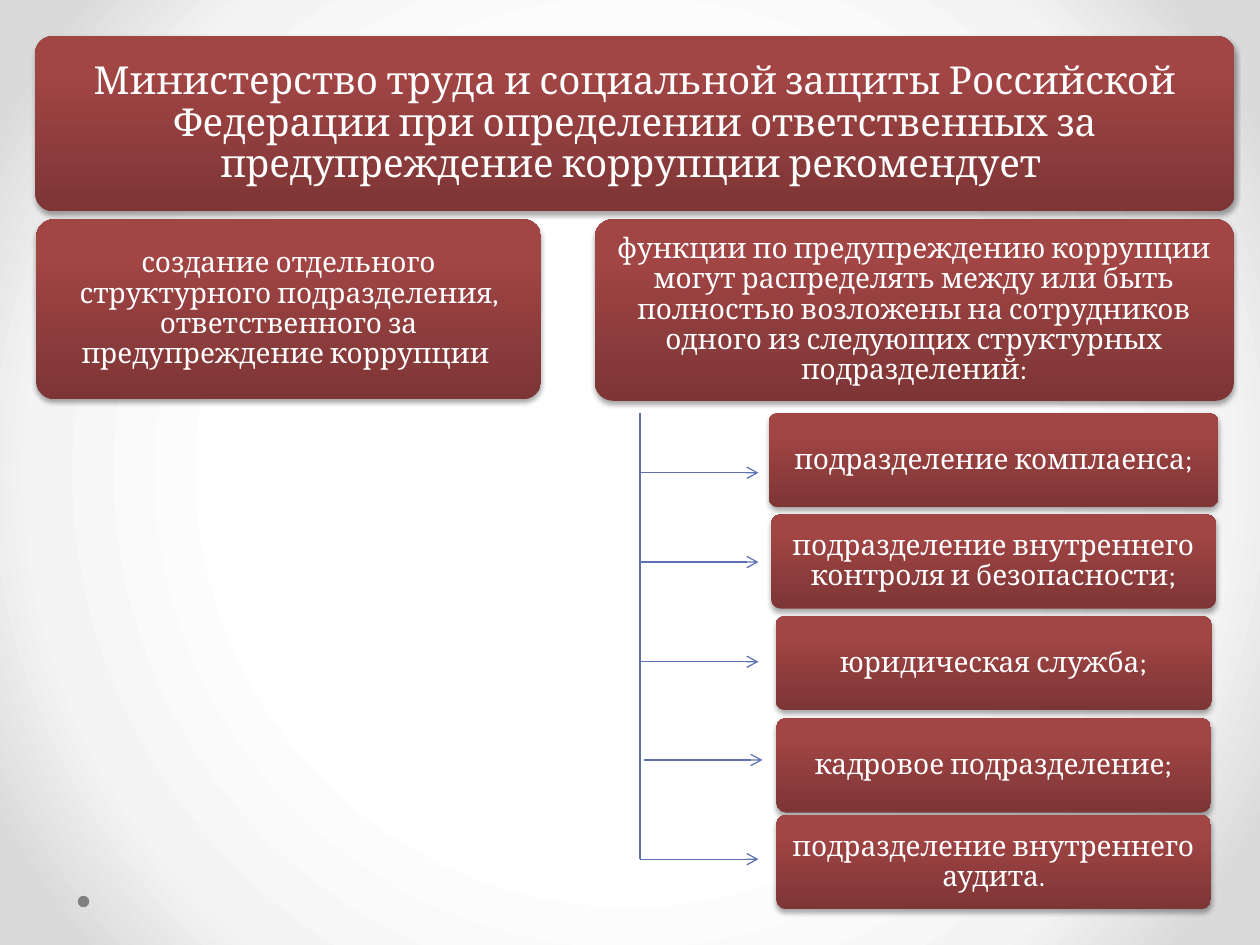
from lxml import etree
from pptx import Presentation
from pptx.dml.color import RGBColor
from pptx.enum.shapes import MSO_CONNECTOR, MSO_SHAPE
from pptx.enum.text import MSO_ANCHOR, PP_ALIGN
from pptx.oxml.ns import qn
from pptx.util import Cm, Pt

ROUNDED, OVAL = MSO_SHAPE.ROUNDED_RECTANGLE, MSO_SHAPE.OVAL
STRAIGHT = MSO_CONNECTOR.STRAIGHT
MIDDLE, CENTER = MSO_ANCHOR.MIDDLE, PP_ALIGN.CENTER

FONT = "Cambria"
WHITE = RGBColor(0xFF, 0xFF, 0xFF)
GREY = RGBColor(0x80, 0x80, 0x80)
BLUE = RGBColor(0x5C, 0x72, 0xB2)
BLACK = RGBColor(0x00, 0x00, 0x00)
# Gradient stops: percent, colour
CARD_STOPS = [(0, RGBColor(0x7D, 0x35, 0x35)), (80, RGBColor(0xA2, 0x45, 0x45)),
              (100, RGBColor(0xA4, 0x43, 0x43))]
PAGE_STOPS = [(50, WHITE), (76, RGBColor(0xF4, 0xF4, 0xF4)),
              (92, RGBColor(0xDA, 0xDA, 0xDA))]

TITLE = ("Министерство труда и социальной защиты Российской Федерации "
         "при определении ответственных за предупреждение коррупции рекомендует ")
SEPARATE_UNIT = ("создание отдельного структурного подразделения, "
                 "ответственного за предупреждение коррупции ")
SHARED_DUTIES = ("функции по предупреждению коррупции могут распределять между "
                 "или быть полностью возложены на сотрудников одного из следующих "
                 "структурных подразделений:")

# Departments: text, top and width in cm
DEPARTMENTS = [
    ("подразделение комплаенса;", 8.33, 9.07),
    ("подразделение внутреннего контроля и безопасности;", 10.37, 8.97),
    ("юридическая служба;", 12.42, 8.79),
    ("кадровое подразделение;", 14.48, 8.76),
    ("подразделение внутреннего аудита.", 16.43, 8.76),
]
DEPARTMENT_CENTER, DEPARTMENT_HEIGHT = 20.03, 1.9

# Arrows: left and height on the page in cm
TRUNK_X, TRUNK_TOP, TRUNK_BOTTOM, ARROW_LENGTH = 12.9, 8.33, 17.32, 2.39
ARROWS = [(TRUNK_X, 9.53), (TRUNK_X, 11.33), (TRUNK_X, 13.34),
          (12.98, 15.32), (TRUNK_X, TRUNK_BOTTOM)]


def add_child(parent, tag, **attributes):
    child = etree.SubElement(parent, qn(tag))
    for name, value in attributes.items():
        child.set(name, str(value))
    return child


def set_gradient(fill, owner, stops):
    """Give the fill these stops and return its emptied-out gradient element."""
    fill.gradient()
    gradient = next(owner.iter(qn("a:gradFill")))
    for child in list(gradient):
        gradient.remove(child)
    stop_list = add_child(gradient, "a:gsLst")
    for percent, color in stops:
        stop = add_child(stop_list, "a:gs", pos=percent * 1000)
        add_child(stop, "a:srgbClr", val=color)
    return gradient


def paint_background(page):
    gradient = set_gradient(page.background.fill, page.element, PAGE_STOPS)
    circle = add_child(gradient, "a:path", path="circle")
    add_child(circle, "a:fillToRect", l=50000, t=50000, r=50000, b=50000)


def add_shadow(shape):
    shape.shadow.inherit = False
    effects = shape.element.spPr.find(qn("a:effectLst"))
    shadow = add_child(effects, "a:outerShdw", blurRad=Pt(3.1), dist=Pt(1.8),
                       dir=90 * 60000, rotWithShape=0)
    color = add_child(shadow, "a:srgbClr", val=BLACK)
    add_child(color, "a:alpha", val=35000)


def add_card(page, text, left, top, width, height, size=16, inset=0.17):
    card = page.shapes.add_shape(ROUNDED, Cm(left), Cm(top), Cm(width), Cm(height))
    card.adjustments[0] = 0.1
    gradient = set_gradient(card.fill, card.element.spPr, CARD_STOPS)
    add_child(gradient, "a:lin", ang=270 * 60000, scaled=0)
    card.line.fill.background()
    add_shadow(card)

    frame = card.text_frame
    frame.word_wrap = True
    frame.vertical_anchor = MIDDLE
    frame.margin_left = frame.margin_right = Cm(inset)
    frame.margin_top = frame.margin_bottom = Cm(inset)
    para = frame.paragraphs[0]
    para.text = text
    para.alignment = CENTER
    para.line_spacing = 0.9
    para.font.name = FONT
    para.font.size = Pt(size)
    para.font.color.rgb = WHITE


def add_line(page, x1, y1, x2, y2, arrow=False):
    line = page.shapes.add_connector(STRAIGHT, Cm(x1), Cm(y1), Cm(x2), Cm(y2))
    line.line.color.rgb = BLUE
    line.line.width = Pt(0.75)
    if arrow:
        add_child(line.line._get_or_add_ln(), "a:tailEnd", type="arrow")
    add_child(line.element.spPr, "a:effectLst")


def add_dot(page, left, top, size):
    dot = page.shapes.add_shape(OVAL, Cm(left), Cm(top), Cm(size), Cm(size))
    dot.shadow.inherit = False
    dot.fill.solid()
    dot.fill.fore_color.rgb = GREY
    dot.line.fill.background()


def main():
    deck = Presentation()
    deck.slide_width, deck.slide_height = Cm(25.4), Cm(19.05)
    page = deck.slides.add_slide(deck.slide_layouts[6])

    # Background and corner dot
    paint_background(page)
    add_dot(page, 1.57, 18.06, 0.23)

    # Title and the two options
    add_card(page, TITLE, 0.71, 0.73, 24.18, 3.53, size=22, inset=0.23)
    add_card(page, SEPARATE_UNIT, 0.73, 4.42, 10.18, 3.63)
    add_card(page, SHARED_DUTIES, 11.99, 4.42, 12.88, 3.66)

    # Departments, centred on one axis
    for text, top, width in DEPARTMENTS:
        add_card(page, text, DEPARTMENT_CENTER - width / 2, top, width, DEPARTMENT_HEIGHT)

    # Trunk and its arrows
    add_line(page, TRUNK_X, TRUNK_TOP, TRUNK_X, TRUNK_BOTTOM)
    for left, y in ARROWS:
        add_line(page, left, y, left + ARROW_LENGTH, y, arrow=True)

    deck.save("out.pptx")


if __name__ == "__main__":
    main()
